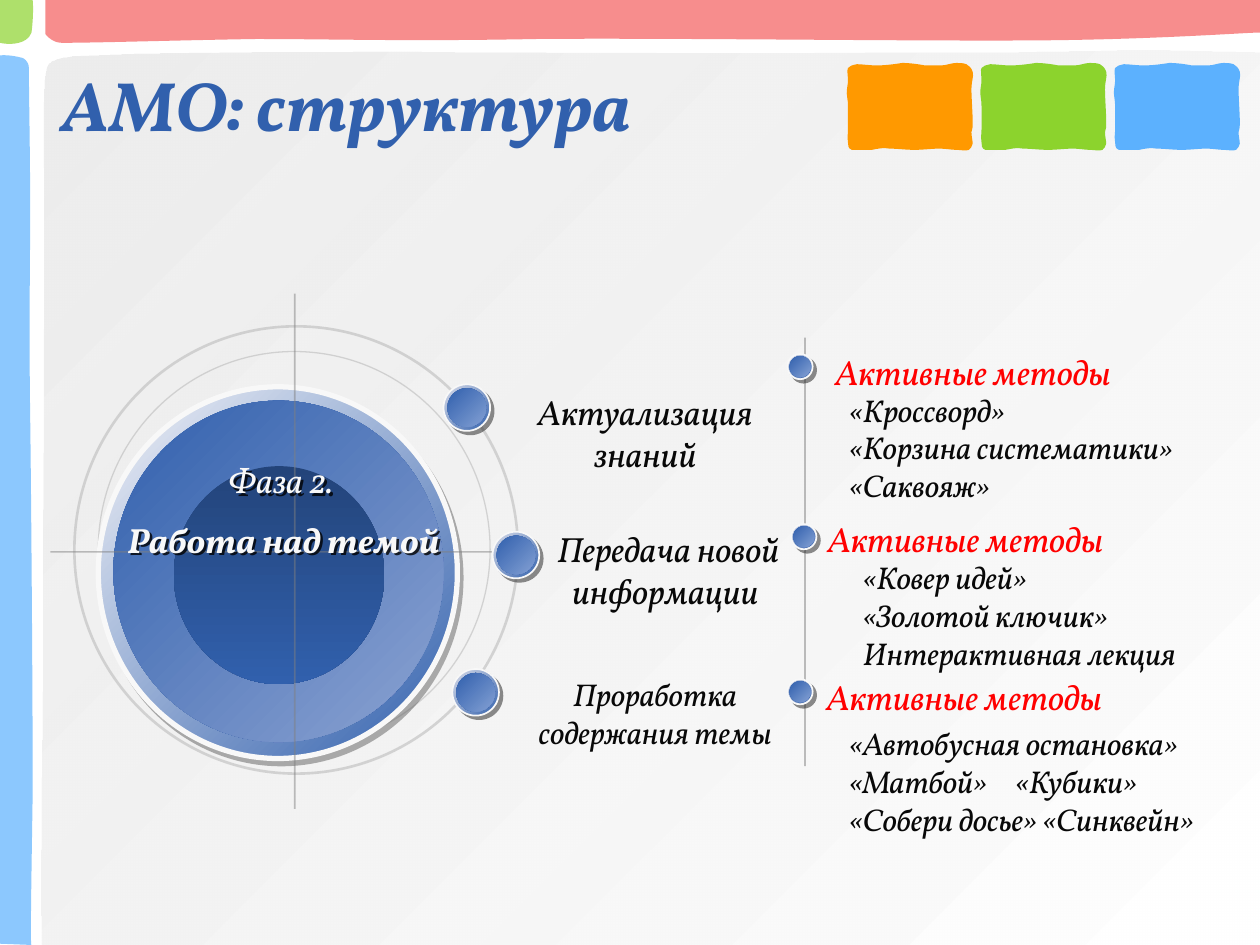
"""Build the slide on the structure of active learning methods, phase two."""
from dataclasses import dataclass
from typing import NamedTuple

from lxml import etree
from pptx import Presentation
from pptx.dml.color import RGBColor
from pptx.enum.shapes import MSO_CONNECTOR, MSO_SHAPE
from pptx.enum.text import MSO_ANCHOR, PP_ALIGN
from pptx.oxml.ns import qn
from pptx.util import Inches, Pt

ELLIPSE = MSO_SHAPE.OVAL
STRAIGHT = MSO_CONNECTOR.STRAIGHT
LEFT, CENTER = PP_ALIGN.LEFT, PP_ALIGN.CENTER
TOP, MIDDLE = MSO_ANCHOR.TOP, MSO_ANCHOR.MIDDLE
COLUMNS, ROWS = 10, 7.5
CELL = Inches(1)
TILE_PITCH = 1.06


@dataclass(frozen=True)
class Theme:
    """Colours, font and type sizes of the slide."""
    font: str = "Vollkorn"
    title_size: int = 40
    label_size: int = 20
    list_size: int = 18
    blue: str = "3160AD"
    deep_blue: str = "23447A"
    disc_tint: str = "8CA3D2"
    disc_rim: str = "F3F4F8"
    dot_tint: str = "83A0D4"
    dot_rim: str = "DDE0EB"
    ink: str = "080808"
    red: str = "FF0000"
    light: str = "F8F8F8"
    ring: str = "B2B2B2"
    axis: str = "808080"
    disc_shadow: str = "5F5F5F"
    dot_shadow: str = "1C1C1C"
    text_shadow: str = "000000"
    backdrop: tuple = ("E6E6E6", "FFFFFF")
    coral: str = "F45E5E"
    sky: str = "5CB1FE"
    green: str = "8CD32D"
    orange: str = "FF9900"


class Area(NamedTuple):
    """Place and size in columns and rows of the grid."""
    left: float
    top: float
    width: float
    height: float


class Shadow(NamedTuple):
    """Offset shadow; distance in points, angle in degrees, opacity in percent."""
    color: str
    distance: float
    angle: float
    opacity: int = 50


class Outline(NamedTuple):
    """Start point with line (2 numbers) and cubic curve (6 numbers) segments."""
    start: tuple
    segments: tuple


class Stage(NamedTuple):
    """One step of the phase with its dots, label and methods."""
    dot: Area
    bullet: Area
    label: str
    label_area: Area
    label_size: int
    heading_area: Area
    methods: tuple
    methods_area: Area


THEME = Theme()
BACKDROP = Outline((10, 7.5), (
    (10, 0.42), (8.86, 0.38, 8.55, 0.42, 7.6, 0.42), (6.66, 0.42, 5.5, 0.43, 4.33, 0.42),
    (3.16, 0.41, 1.23, 0.41, 0.57, 0.45), (0.36, 0.48, 0.36, 0.49, 0.35, 0.73),
    (0.34, 0.96, 0.35, 1.1, 0.35, 1.82), (0.35, 2.56, 0.34, 4.12, 0.34, 5.06),
    (0.34, 6.01, 0.32, 6.62, 0.33, 7.5)))
TOP_BAND = Outline((10, 0), (
    (10, 0.26), (10.01, 0.25, 9.28, 0.31, 8.32, 0.32), (7.36, 0.33, 5.31, 0.3, 4.26, 0.31),
    (3.21, 0.33, 2.65, 0.31, 2.03, 0.31), (1.4, 0.32, 0.77, 0.34, 0.49, 0.34),
    (0.41, 0.34, 0.36, 0.27, 0.36, 0.27), (0.36, 0.27, 0.36, 0.14, 0.36, 0)))
SIDE_BAND = Outline((0, 7.49), (
    (0.25, 7.5), (0.24, 7.51, 0.25, 6.98, 0.26, 6.28), (0.26, 5.58, 0.25, 4.07, 0.24, 3.3),
    (0.23, 2.54, 0.24, 2.12, 0.24, 1.67), (0.24, 1.21, 0.23, 0.75, 0.23, 0.54),
    (0.23, 0.48, 0.18, 0.46, 0.18, 0.46), (0.07, 0.43, 0, 0.44, 0, 0.44)))
CORNER = Outline((0, 0), (
    (0.26, 0), (0.27, 0.12, 0.25, 0.26, 0.25, 0.26), (0.23, 0.31, 0.19, 0.33, 0.15, 0.34),
    (0.07, 0.36, 0, 0.34, 0, 0.34)))
TILE = Outline((8.85, 0.54), (
    (8.87, 0.52, 8.88, 0.52, 8.92, 0.51), (8.96, 0.51, 9.02, 0.52, 9.08, 0.52),
    (9.14, 0.52, 9.22, 0.51, 9.28, 0.5), (9.34, 0.5, 9.41, 0.51, 9.46, 0.52),
    (9.51, 0.52, 9.55, 0.52, 9.59, 0.52), (9.63, 0.52, 9.67, 0.5, 9.71, 0.5),
    (9.74, 0.5, 9.76, 0.5, 9.79, 0.51), (9.81, 0.52, 9.83, 0.54, 9.84, 0.57),
    (9.85, 0.61, 9.83, 0.64, 9.83, 0.71), (9.83, 0.77, 9.84, 0.91, 9.84, 0.96),
    (9.84, 1.01, 9.84, 1.02, 9.83, 1.05), (9.83, 1.08, 9.84, 1.12, 9.84, 1.14),
    (9.83, 1.16, 9.83, 1.18, 9.81, 1.19), (9.79, 1.2, 9.74, 1.19, 9.71, 1.19),
    (9.67, 1.19, 9.63, 1.18, 9.57, 1.18), (9.52, 1.18, 9.44, 1.19, 9.38, 1.19),
    (9.31, 1.19, 9.24, 1.18, 9.18, 1.18), (9.13, 1.17, 9.09, 1.18, 9.04, 1.19),
    (8.99, 1.19, 8.91, 1.19, 8.88, 1.19), (8.85, 1.18, 8.85, 1.15, 8.85, 1.13),
    (8.84, 1.1, 8.85, 1.08, 8.85, 1.03), (8.85, 0.98, 8.85, 0.89, 8.85, 0.84),
    (8.85, 0.79, 8.84, 0.77, 8.84, 0.74), (8.84, 0.7, 8.85, 0.67, 8.85, 0.64),
    (8.85, 0.6, 8.84, 0.56, 8.85, 0.54)))
STAGES = (
    Stage(Area(3.52, 3.05, 0.37, 0.37), Area(6.25, 2.81, 0.2, 0.2),
          "Актуализация знаний", Area(3.98, 3.05, 2.28, 0.77), THEME.label_size,
          Area(6.48, 2.73, 2.74, 0.44),
          ("«Кроссворд»", "«Корзина систематики»", "«Саквояж»"), Area(6.64, 3.05, 3.13, 1.01)),
    Stage(Area(3.91, 4.22, 0.37, 0.37), Area(6.28, 4.16, 0.2, 0.2),
          " Передача новой информации", Area(4.14, 4.14, 2.28, 0.77), THEME.label_size,
          Area(6.42, 4.06, 2.74, 0.44),
          ("«Ковер идей»", "«Золотой ключик»", "Интерактивная лекция"),
          Area(6.75, 4.38, 3.25, 1.01)),
    Stage(Area(3.59, 5.31, 0.37, 0.37), Area(6.25, 5.39, 0.2, 0.2),
          "Проработка содержания темы", Area(4.06, 5.31, 2.28, 1.04), THEME.list_size,
          Area(6.41, 5.31, 2.82, 0.44),
          ("«Автобусная остановка»", "«Матбой»\t«Кубики»", "«Собери досье» «Синквейн»"),
          Area(6.64, 5.7, 3.2, 1.31)),
)


def grid(*lengths: float) -> list:
    """Turn grid lengths into slide units."""
    return [round(length * CELL) for length in lengths]


def fade(shape, percent: int) -> None:
    """Set the opacity of the first colour of a shape."""
    color = next(shape.element.spPr.iter(qn("a:srgbClr")))
    etree.SubElement(color, qn("a:alpha"), val=str(percent * 1000))


def cast_shadow(shape, shadow: Shadow) -> None:
    """Give a shape an offset shadow."""
    shape.shadow.inherit = False
    effect = etree.SubElement(shape.element.spPr.find(qn("a:effectLst")), qn("a:outerShdw"),
                              blurRad="0", dist=str(Pt(shadow.distance)),
                              dir=str(shadow.angle * 60000), algn="ctr", rotWithShape="0")
    color = etree.SubElement(effect, qn("a:srgbClr"), val=shadow.color)
    etree.SubElement(color, qn("a:alpha"), val=str(shadow.opacity * 1000))


def paint(shape, colors: tuple, angle: int = 45) -> None:
    """Fill a shape with one colour, a two-colour gradient or nothing."""
    shape.shadow.inherit = False
    if len(colors) == 2:
        shape.fill.gradient()
        shape.fill.gradient_angle = 360 - angle
        for stop, color in zip(shape.fill.gradient_stops, colors):
            stop.color.rgb = RGBColor.from_string(color)
    elif colors:
        shape.fill.solid()
        shape.fill.fore_color.rgb = RGBColor.from_string(colors[0])
    else:
        shape.fill.background()


def draw_outline(page, outline: Outline, colors: tuple, opacity: int = 100, shift: float = 0) -> None:
    """Draw a wavy filled outline, moved sideways by a number of columns."""
    builder = page.shapes.build_freeform(*grid(outline.start[0] + shift, outline.start[1]), scale=1.0)
    for segment in outline.segments:
        builder.add_line_segments([grid(column + shift, row) for column, row
                                   in zip(segment[::2], segment[1::2])], close=False)
    shape = builder.convert_to_shape()
    route = next(shape.element.iter(qn("a:path")))
    steps = iter(route.findall(qn("a:lnTo")))
    for segment in outline.segments:
        curve = next(steps)
        if len(segment) == 6:
            curve.tag = qn("a:cubicBezTo")
            for step in (next(steps), next(steps)):
                curve.append(step[0])
                route.remove(step)
    etree.SubElement(route, qn("a:close"))
    paint(shape, colors)
    shape.line.fill.background()
    if opacity < 100:
        fade(shape, opacity)


def draw_circle(page, area: Area, *, colors=(), angle=45, line=None, width=1.0, shadow=None) -> None:
    """Draw a disc, or a half-transparent ring when it has no fill."""
    circle = page.shapes.add_shape(ELLIPSE, *grid(*area))
    paint(circle, colors, angle)
    if line:
        circle.line.color.rgb = RGBColor.from_string(line)
        circle.line.width = Pt(width)
    else:
        circle.line.fill.background()
    if not colors:
        fade(circle, 50)
    if shadow:
        cast_shadow(circle, shadow)


def draw_dot(page, area: Area) -> None:
    """Draw a small ball with a rim a twelfth of its width."""
    rim = area.width / 12
    draw_circle(page, area, colors=(THEME.dot_rim, THEME.blue), line=THEME.light,
                shadow=Shadow(THEME.dot_shadow, 2.8, 45))
    core = Area(area.left + rim, area.top + rim, area.width - 2 * rim, area.height - 2 * rim)
    draw_circle(page, core, colors=(THEME.blue, THEME.dot_tint))


def draw_axis(page, *ends: float) -> None:
    """Draw a thin half-transparent line."""
    axis = page.shapes.add_connector(STRAIGHT, *grid(*ends))
    axis.line.color.rgb = RGBColor.from_string(THEME.axis)
    axis.line.width = Pt(1)
    fade(axis, 50)
    etree.SubElement(axis.element.spPr, qn("a:effectLst"))


def write(page, lines: tuple, area: Area, *, size: int, color: str = THEME.ink, bold=(), align=LEFT,
          anchor=TOP, gap: float = 0, tab: float = 0, shadow=None) -> None:
    """Write italic lines; bold holds the numbers of the bold ones."""
    box = page.shapes.add_textbox(*grid(*area))
    if shadow:
        cast_shadow(box, shadow)
    frame = box.text_frame
    frame.word_wrap = True
    frame.vertical_anchor = anchor
    for number, line in enumerate(lines):
        para = frame.add_paragraph() if number else frame.paragraphs[0]
        para.alignment = align
        if number and gap:
            para.space_before = Pt(gap)
        if "\t" in line:
            stops = etree.SubElement(para._p.get_or_add_pPr(), qn("a:tabLst"))
            etree.SubElement(stops, qn("a:tab"), pos=str(Inches(tab)), algn="l")
        span = para.add_run()
        span.text = line
        span.font.name = THEME.font
        span.font.size = Pt(size)
        span.font.italic = True
        span.font.bold = number in bold
        span.font.color.rgb = RGBColor.from_string(color)


def draw_frame(page) -> None:
    """Draw the backdrop, the bands and the three tiles."""
    draw_outline(page, BACKDROP, THEME.backdrop, 70)
    for outline, color in ((TOP_BAND, THEME.coral), (SIDE_BAND, THEME.sky), (CORNER, THEME.green)):
        draw_outline(page, outline, (color,), 70)
    for number, color in enumerate((THEME.sky, THEME.green, THEME.orange)):
        draw_outline(page, TILE, (color,), shift=-number * TILE_PITCH)


def draw_target(page) -> None:
    """Draw the large disc with its rings, axes and caption."""
    draw_circle(page, Area(0.78, 2.79, 3.11, 3.14), line=THEME.ring, width=0.75)
    draw_circle(page, Area(0.78, 3.07, 2.85, 2.95), colors=(THEME.disc_rim, THEME.blue),
                line=THEME.light, width=3, shadow=Shadow(THEME.disc_shadow, 3.6, 56))
    draw_circle(page, Area(0.9, 3.18, 2.62, 2.71), colors=(THEME.blue, THEME.disc_tint))
    draw_circle(page, Area(1.38, 3.7, 1.67, 1.73), colors=(THEME.deep_blue, THEME.blue), angle=90)
    draw_circle(page, Area(0.59, 2.59, 3.52, 3.55), line=THEME.ring, width=1.5)
    draw_axis(page, 0.4, 4.38, 4.28, 4.38)
    draw_axis(page, 2.34, 2.33, 2.34, 6.42)
    write(page, ("Фаза 2.", " Работа над темой"), Area(0.78, 3.59, 2.89, 1.28),
          size=THEME.label_size, color=THEME.light, bold=(1,), align=CENTER, gap=10,
          shadow=Shadow(THEME.text_shadow, 2, 45, 80))


def draw_stage(page, stage: Stage) -> None:
    """Draw one stage with its dots, label and list of methods."""
    write(page, (" Активные методы",), stage.heading_area, size=THEME.label_size, color=THEME.red)
    write(page, stage.methods, stage.methods_area, size=THEME.list_size, tab=1.32)
    write(page, (stage.label,), stage.label_area, size=stage.label_size, align=CENTER)
    draw_dot(page, stage.dot)
    draw_dot(page, stage.bullet)


def main() -> None:
    """Build and save the deck."""
    deck = Presentation()
    deck.slide_width, deck.slide_height = grid(COLUMNS, ROWS)
    page = deck.slides.add_slide(deck.slide_layouts[6])
    draw_frame(page)
    write(page, ("АМО: структура",), Area(0.39, 0.31, 6.36, 1.03), size=THEME.title_size,
          color=THEME.blue, bold=(0,), anchor=MIDDLE)
    draw_axis(page, 6.39, 2.68, 6.39, 6.08)
    draw_target(page)
    for stage in STAGES:
        draw_stage(page, stage)
    deck.save("out.pptx")


if __name__ == "__main__":
    main()
